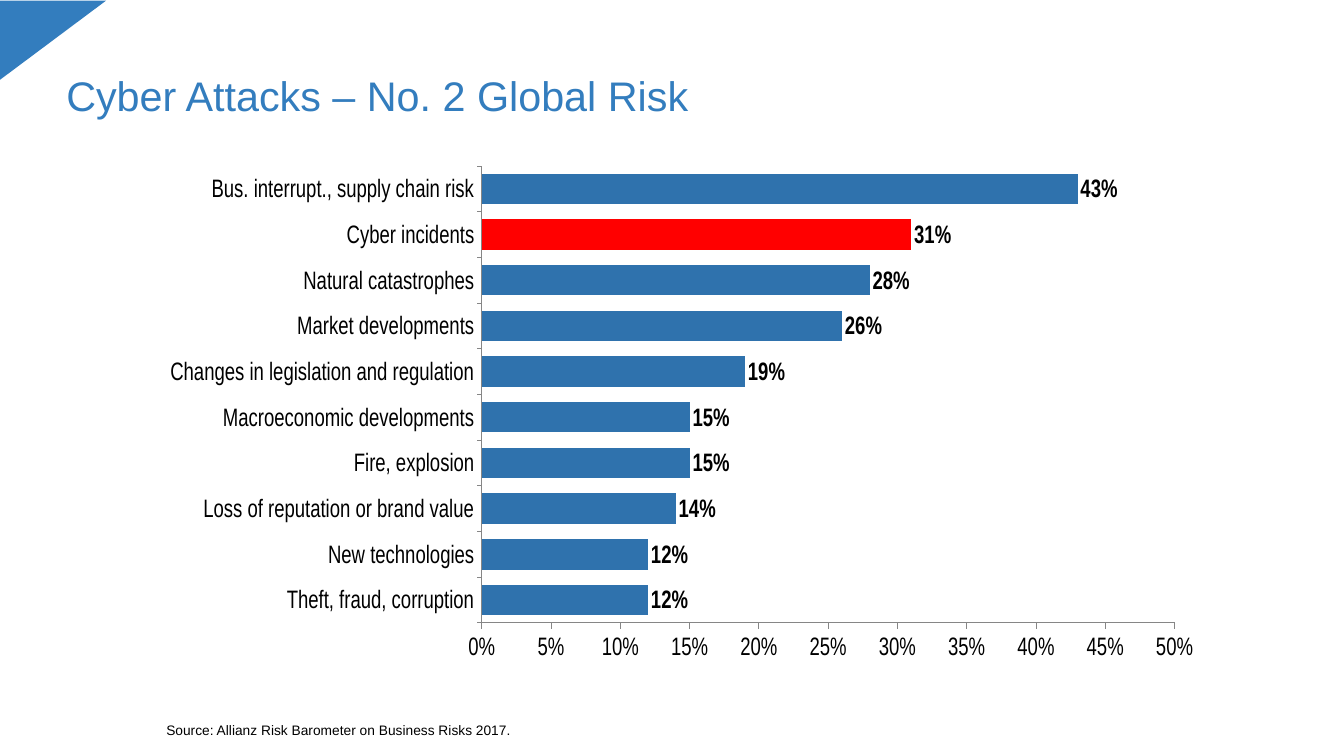
from dataclasses import dataclass

from lxml import etree
from pptx import Presentation
from pptx.chart.data import CategoryChartData
from pptx.dml.color import RGBColor
from pptx.enum.chart import XL_CHART_TYPE, XL_LABEL_POSITION, XL_TICK_MARK
from pptx.enum.shapes import MSO_SHAPE
from pptx.enum.text import MSO_ANCHOR, MSO_AUTO_SIZE, PP_ALIGN
from pptx.oxml.ns import qn
from pptx.util import Cm, Pt

BARS = XL_CHART_TYPE.BAR_CLUSTERED
OUTER = XL_LABEL_POSITION.OUTSIDE_END
TICK = XL_TICK_MARK.OUTSIDE
NO_TICK = XL_TICK_MARK.NONE
CORNER = MSO_SHAPE.RIGHT_TRIANGLE
BOTTOM = MSO_ANCHOR.BOTTOM
NO_FIT = MSO_AUTO_SIZE.NONE
LEFT = PP_ALIGN.LEFT


@dataclass
class Theme:
    face: str = "Arial"
    blue: str = "337DBE"
    bar: str = "2F72AD"
    alert: str = "FF0000"
    ink: str = "000000"
    axis: str = "868686"
    title: float = 29.5
    note: float = 9.8
    chart: float = 16
    label: float = 18


RISKS = [
    ("Theft, fraud, corruption", 0.12),
    ("New technologies", 0.12),
    ("Loss of reputation or brand value", 0.14),
    ("Fire, explosion", 0.15),
    ("Macroeconomic developments", 0.15),
    ("Changes in legislation and regulation", 0.19),
    ("Market developments", 0.26),
    ("Natural catastrophes", 0.28),
    ("Cyber incidents", 0.31),
    ("Bus. interrupt., supply chain risk", 0.43),
]
ALERT = "Cyber incidents"
PLOT = {"x": 0.435, "y": 0.051, "w": 0.92, "h": 0.833}


def paint(fill, color):
    fill.solid()
    fill.fore_color.rgb = RGBColor.from_string(color)


def style(font, face, size, color, bold=False):
    font.name = face
    font.size = Pt(size)
    font.bold = bold
    font.color.rgb = RGBColor.from_string(color)


def write(shape, text, face, size, color, pad):
    frame = shape.text_frame
    frame.word_wrap = True
    frame.auto_size = NO_FIT
    frame.vertical_anchor = BOTTOM
    frame.margin_left, frame.margin_top, frame.margin_right, frame.margin_bottom = map(Cm, pad)
    para = frame.paragraphs[0]
    para.text = text
    para.alignment = LEFT
    para.line_spacing = 0.9
    para.space_before = Pt(0)
    props = para._p.get_or_add_pPr()
    props.set("marL", "0")
    props.set("indent", "0")
    etree.SubElement(props, qn("a:buNone"))
    style(para.runs[0].font, face, size, color)


class Board:
    def __init__(self, slide, theme):
        self.slide = slide
        self.theme = theme

    def place(self, shape, box):
        shape.left, shape.top, shape.width, shape.height = map(Cm, box)

    def corner(self, box):
        shape = self.slide.shapes.add_shape(CORNER, *map(Cm, box))
        shape.rotation = 90
        shape.shadow.inherit = False
        paint(shape.fill, self.theme.blue)
        shape.line.fill.background()

    def title(self, text, box):
        shape = self.slide.shapes.title
        self.place(shape, box)
        write(shape, text, face=self.theme.face, size=self.theme.title,
              color=self.theme.blue, pad=(0.25, 0.13, 0.25, 0.25))

    def note(self, text, box):
        shape = self.slide.placeholders[1]
        self.place(shape, box)
        write(shape, text, face=self.theme.face, size=self.theme.note,
              color=self.theme.ink, pad=(0, 0, 0, 0))

    def axis(self, axis):
        axis.has_major_gridlines = False
        axis.major_tick_mark = TICK
        axis.minor_tick_mark = NO_TICK
        paint(axis.format.line.fill, self.theme.axis)
        axis.format.line.width = Pt(0.75)
        style(axis.tick_labels.font, self.theme.face, self.theme.label, self.theme.ink)

    def layout(self, chart):
        area = chart.element.find(".//" + qn("c:plotArea"))
        for old in area.findall(qn("c:layout")):
            area.remove(old)
        layout = etree.Element(qn("c:layout"))
        manual = etree.SubElement(layout, qn("c:manualLayout"))
        parts = {"layoutTarget": "inner", "xMode": "edge", "yMode": "edge", **PLOT}
        for name, value in parts.items():
            etree.SubElement(manual, qn("c:" + name)).set("val", str(value))
        area.insert(0, layout)

    def chart(self, rows, box):
        theme = self.theme
        names, values = zip(*rows)
        data = CategoryChartData(number_format="0%")
        data.categories = names
        data.add_series("Series 1", values)
        chart = self.slide.shapes.add_chart(BARS, *map(Cm, box), data).chart
        chart.has_title = False
        chart.has_legend = False
        style(chart.font, theme.face, theme.chart, theme.ink)
        self.axis(chart.category_axis)
        scale = chart.value_axis
        self.axis(scale)
        scale.minimum_scale, scale.maximum_scale, scale.major_unit = 0, 0.5, 0.05
        scale.tick_labels.number_format = "0%"
        scale.tick_labels.number_format_is_linked = False
        plot = chart.plots[0]
        plot.gap_width = 50
        plot.vary_by_categories = False
        bars = plot.series[0]
        paint(bars.format.fill, theme.bar)
        paint(bars.points[names.index(ALERT)].format.fill, theme.alert)
        labels = bars.data_labels
        labels.show_value = True
        labels.position = OUTER
        labels.number_format = "0%"
        labels.number_format_is_linked = False
        style(labels.font, theme.face, theme.label, theme.ink, bold=True)
        self.layout(chart)


def main():
    deck = Presentation()
    deck.slide_width, deck.slide_height = Cm(33.87), Cm(19.05)
    slide = deck.slides.add_slide(deck.slide_layouts[1])
    board = Board(slide, Theme())
    board.corner((0.3, -0.33, 2.03, 2.72))
    board.title("Cyber Attacks – No. 2 Global Risk", (1.42, 0.64, 31.32, 2.64))
    board.note("Source: Allianz Risk Barometer on Business Risks 2017.",
               (4.19, 17.48, 28.45, 1.14))
    board.chart(RISKS, (4.29, 3.48, 25.78, 13.82))
    deck.save("out.pptx")


if __name__ == "__main__":
    main()
